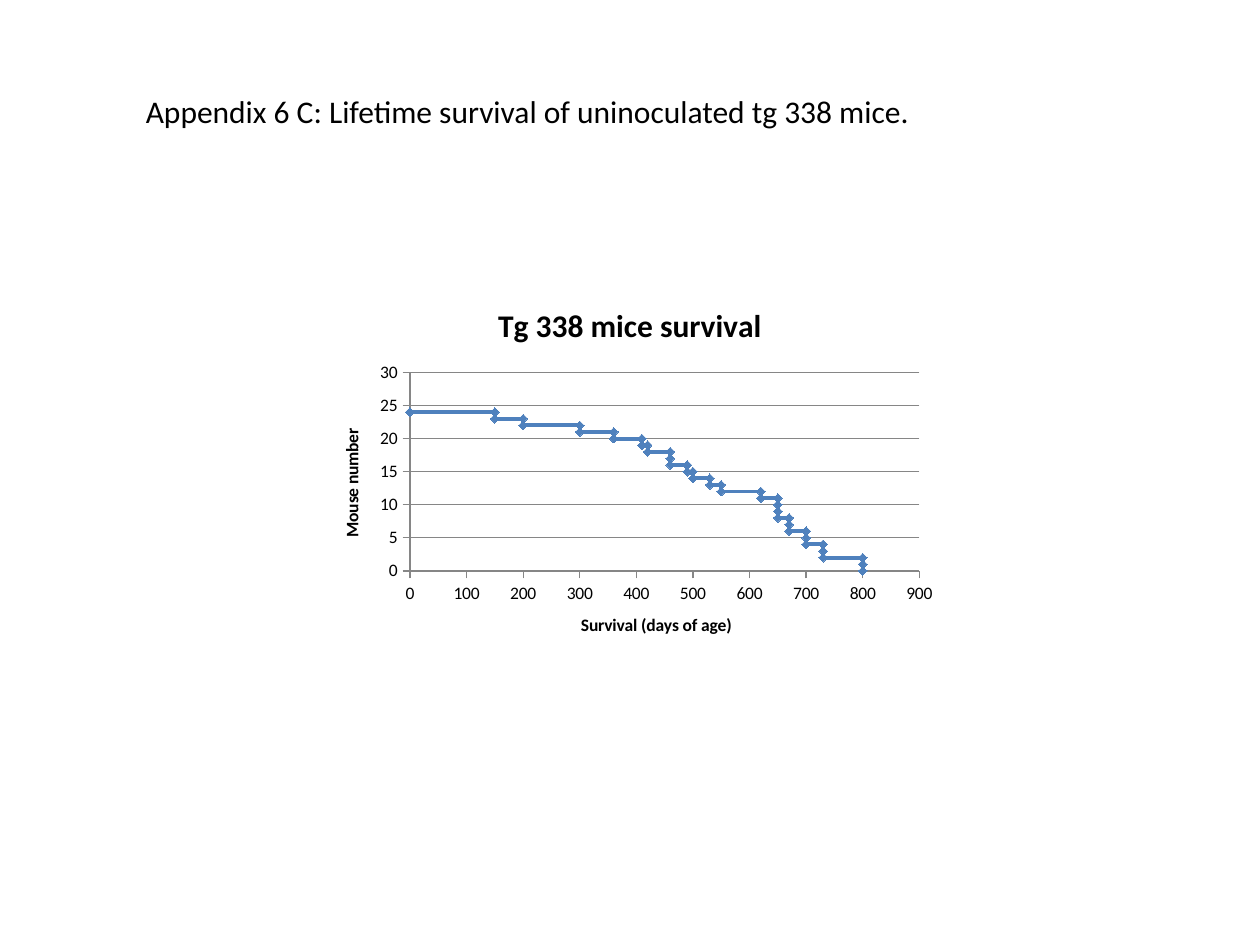
"""Build a slide with the survival curve of uninoculated tg 338 mice."""
from dataclasses import dataclass
from typing import Any

from pptx import Presentation
from pptx import util as u
from pptx.chart.data import XyChartData
from pptx.dml.color import RGBColor
from pptx.enum import chart as ch, text as tx

HUES = {"ink": "000000", "curve": "4F81BD", "grid": "868686"}
FACE = "Calibri"
DEATHS = [150, 200, 300, 360, 410, 420, 460, 460, 490, 500, 530, 550,
          620, 650, 650, 650, 670, 670, 700, 700, 730, 730, 800, 800]


@dataclass
class Scale:
    title: str
    top: int
    step: int
    grid: bool


DAYS = Scale("Survival (days of age)", 900, 100, False)
MICE = Scale("Mouse number", 30, 5, True)


def hue(name: str) -> RGBColor:
    return RGBColor.from_string(HUES[name])


def style(font: Any, size: float, bold: bool = False) -> None:
    font.name, font.size, font.bold = FACE, u.Pt(size), bold
    font.color.rgb = hue("ink")


def label(owner: Any, words: str, size: float) -> None:
    frame = owner.text_frame
    frame.text = words
    style(frame.paragraphs[0].font, size, True)


def rule(line: Any) -> None:
    line.color.rgb = hue("grid")
    line.width = u.Pt(0.75)


def set_axis(axis: Any, scale: Scale) -> None:
    axis.minimum_scale, axis.maximum_scale = 0, scale.top
    axis.major_unit = scale.step
    axis.major_tick_mark = ch.XL_TICK_MARK.OUTSIDE
    axis.minor_tick_mark = ch.XL_TICK_MARK.NONE
    axis.has_major_gridlines = scale.grid
    if scale.grid:
        rule(axis.major_gridlines.format.line)
    rule(axis.format.line)
    style(axis.tick_labels.font, 10)
    label(axis.axis_title, scale.title, 10)


def add_curve(slide: Any) -> None:
    data = XyChartData()
    row = data.add_series("Series 1")
    alive = len(DEATHS)
    row.add_data_point(0, alive)
    for day in DEATHS:
        row.add_data_point(day, alive)
        alive -= 1
        row.add_data_point(day, alive)

    chart = slide.shapes.add_chart(
        ch.XL_CHART_TYPE.XY_SCATTER_LINES, u.Cm(6.35), u.Cm(5.72),
        u.Cm(12.7), u.Cm(7.62), data).chart
    style(chart.font, 10)
    chart.has_legend = False
    chart.has_title = True
    label(chart.chart_title, "Tg 338 mice survival", 18)
    chart.chart_title.include_in_layout = False
    chart.plots[0].vary_by_categories = False
    set_axis(chart.category_axis, DAYS)
    set_axis(chart.value_axis, MICE)

    curve = chart.plots[0].series[0]
    curve.smooth = False
    curve.format.line.color.rgb = hue("curve")
    curve.format.line.width = u.Pt(2.25)
    mark = curve.marker
    mark.style, mark.size = ch.XL_MARKER_STYLE.DIAMOND, 5
    mark.format.fill.solid()
    mark.format.fill.fore_color.rgb = hue("curve")
    mark.format.line.color.rgb = hue("curve")


def add_head(slide: Any) -> None:
    frame = slide.shapes.add_textbox(
        u.Cm(2.69), u.Cm(1.73), u.Cm(19.61), u.Cm(1.02)).text_frame
    frame.word_wrap = True
    frame.auto_size = tx.MSO_AUTO_SIZE.SHAPE_TO_FIT_TEXT
    frame.text = "Appendix 6 C: Lifetime survival of uninoculated tg 338 mice."
    style(frame.paragraphs[0].font, 18)


def main() -> None:
    deck = Presentation()
    deck.slide_width, deck.slide_height = u.Cm(25.4), u.Cm(19.05)
    slide = deck.slides.add_slide(deck.slide_layouts[6])
    add_curve(slide)
    add_head(slide)
    deck.save("out.pptx")


if __name__ == "__main__":
    main()
